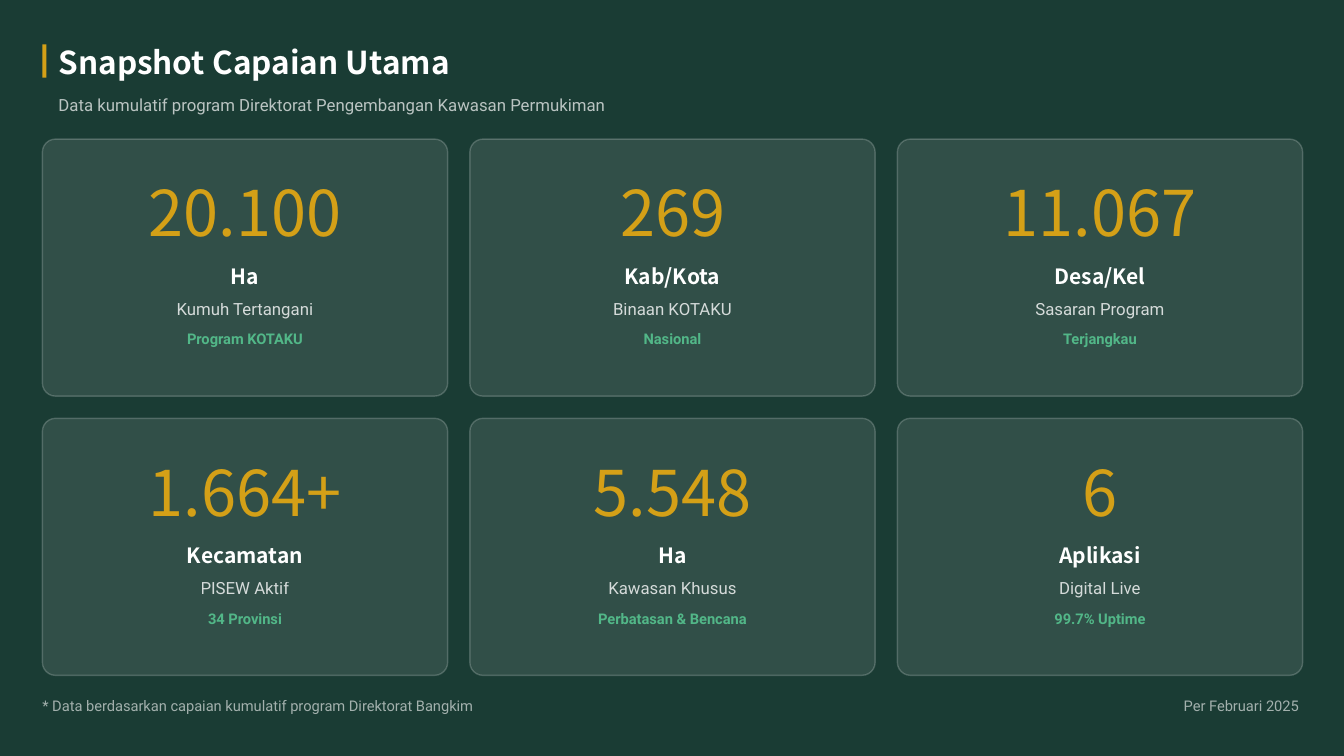
from dataclasses import dataclass

from lxml.etree import SubElement
from pptx import Presentation
from pptx.dml.color import RGBColor
from pptx.enum.shapes import MSO_SHAPE
from pptx.enum.text import MSO_ANCHOR, PP_ALIGN
from pptx.oxml.ns import qn
from pptx.util import Inches, Pt

COLORS = {"background": "1A3C34", "gold": "D4A017", "white": "FFFFFF", "green": "52B788"}
HEADING_FONT = "Noto Sans CJK SC"
BODY_FONT = "Roboto"

# Header text, in inches
HEADER_LEFT, HEADER_WIDTH = 0.58, 12.42

# Card grid, in inches
COLUMNS = 3
GRID_LEFT, GRID_TOP = 0.42, 1.38
CARD_WIDTH, CARD_HEIGHT = 4.02, 2.55
GAP = 0.22
CORNER_RADIUS = 0.13
TEXT_WIDTH = 2.6


@dataclass(frozen=True)
class TextStyle:
    size: float
    font: str
    color: str
    bold: bool = False
    opacity: int = 100
    line_spacing: float = 1.0
    align: PP_ALIGN = PP_ALIGN.LEFT


@dataclass(frozen=True)
class CardLine:
    offset: float
    height: float
    style: TextStyle


@dataclass(frozen=True)
class Metric:
    value: str
    unit: str
    label: str
    note: str


TITLE = TextStyle(22.5, HEADING_FONT, "white", bold=True)
SUBTITLE = TextStyle(12, BODY_FONT, "white", opacity=70, line_spacing=1.3)
FOOTER = TextStyle(10.5, BODY_FONT, "white", opacity=60, line_spacing=1.2)

CENTER = PP_ALIGN.CENTER
CARD_LINES = {
    "value": CardLine(0.48, 0.62, TextStyle(45, HEADING_FONT, "gold", False, 100, 0.8, CENTER)),
    "unit": CardLine(1.19, 0.29, TextStyle(15, HEADING_FONT, "white", True, 100, 1.2, CENTER)),
    "label": CardLine(1.53, 0.25, TextStyle(12, BODY_FONT, "white", False, 80, 1.3, CENTER)),
    "note": CardLine(1.86, 0.21, TextStyle(10.5, BODY_FONT, "green", True, 100, 1.2, CENTER)),
}

METRICS = [
    Metric("20.100", "Ha", "Kumuh Tertangani", "Program KOTAKU"),
    Metric("269", "Kab/Kota", "Binaan KOTAKU", "Nasional"),
    Metric("11.067", "Desa/Kel", "Sasaran Program", "Terjangkau"),
    Metric("1.664+", "Kecamatan", "PISEW Aktif", "34 Provinsi"),
    Metric("5.548", "Ha", "Kawasan Khusus", "Perbatasan & Bencana"),
    Metric("6", "Aplikasi", "Digital Live", "99.7% Uptime"),
]


def rgb(name: str) -> RGBColor:
    return RGBColor.from_string(COLORS[name])


def set_opacity(element, percent: int) -> None:
    """Apply opacity to the first solid colour inside an XML element."""
    color = next(element.iter(qn("a:srgbClr")))
    SubElement(color, qn("a:alpha")).set("val", str(percent * 1000))


def add_text(slide, text: str, left: float, top: float, width: float,
             height: float, style: TextStyle) -> None:
    box = slide.shapes.add_textbox(Inches(left), Inches(top), Inches(width), Inches(height))
    frame = box.text_frame
    frame.word_wrap = True
    frame.vertical_anchor = MSO_ANCHOR.MIDDLE
    frame.margin_left = frame.margin_right = frame.margin_top = frame.margin_bottom = 0
    frame.text = text
    paragraph = frame.paragraphs[0]
    paragraph.alignment = style.align
    paragraph.line_spacing = style.line_spacing
    run = paragraph.runs[0]
    run.font.name = style.font
    run.font.size = Pt(style.size)
    run.font.bold = style.bold
    run.font.color.rgb = rgb(style.color)
    if style.opacity < 100:
        set_opacity(run.font._element, style.opacity)


def add_panel(slide, preset: MSO_SHAPE, left: float, top: float, width: float,
              height: float, color: str):
    panel = slide.shapes.add_shape(preset, Inches(left), Inches(top),
                                   Inches(width), Inches(height))
    panel.shadow.inherit = False
    panel.fill.solid()
    panel.fill.fore_color.rgb = rgb(color)
    panel.line.fill.background()
    return panel


def add_card(slide, metric: Metric, left: float, top: float) -> None:
    card = add_panel(slide, MSO_SHAPE.ROUNDED_RECTANGLE, left, top,
                     CARD_WIDTH, CARD_HEIGHT, "white")
    card.adjustments[0] = CORNER_RADIUS / CARD_HEIGHT
    set_opacity(card._element.spPr, 10)
    card.line.color.rgb = rgb("white")
    card.line.width = Pt(1)
    set_opacity(card._element.spPr.find(qn("a:ln")), 20)

    text_left = left + (CARD_WIDTH - TEXT_WIDTH) / 2
    for field, line in CARD_LINES.items():
        add_text(slide, getattr(metric, field), text_left, top + line.offset,
                 TEXT_WIDTH, line.height, line.style)


def main() -> None:
    presentation = Presentation()
    presentation.slide_width = Inches(13.33)
    presentation.slide_height = Inches(7.5)
    slide = presentation.slides.add_slide(presentation.slide_layouts[6])
    slide.background.fill.solid()
    slide.background.fill.fore_color.rgb = rgb("background")

    # Header
    add_panel(slide, MSO_SHAPE.RECTANGLE, GRID_LEFT, 0.44, 0.04, 0.33, "gold")
    add_text(slide, "Snapshot Capaian Utama",
             HEADER_LEFT, 0.42, HEADER_WIDTH, 0.38, TITLE)
    add_text(slide, "Data kumulatif program Direktorat Pengembangan Kawasan Permukiman",
             HEADER_LEFT, 0.88, HEADER_WIDTH, 0.25, SUBTITLE)

    # Metric cards
    for index, metric in enumerate(METRICS):
        row, column = divmod(index, COLUMNS)
        add_card(slide, metric, GRID_LEFT + column * (CARD_WIDTH + GAP),
                 GRID_TOP + row * (CARD_HEIGHT + GAP))

    # Footer
    add_text(slide, "* Data berdasarkan capaian kumulatif program Direktorat Bangkim",
             GRID_LEFT, 6.88, 4.36, 0.21, FOOTER)
    add_text(slide, "Per Februari 2025", 11.74, 6.88, 1.25, 0.21, FOOTER)

    presentation.save("out.pptx")


if __name__ == "__main__":
    main()
